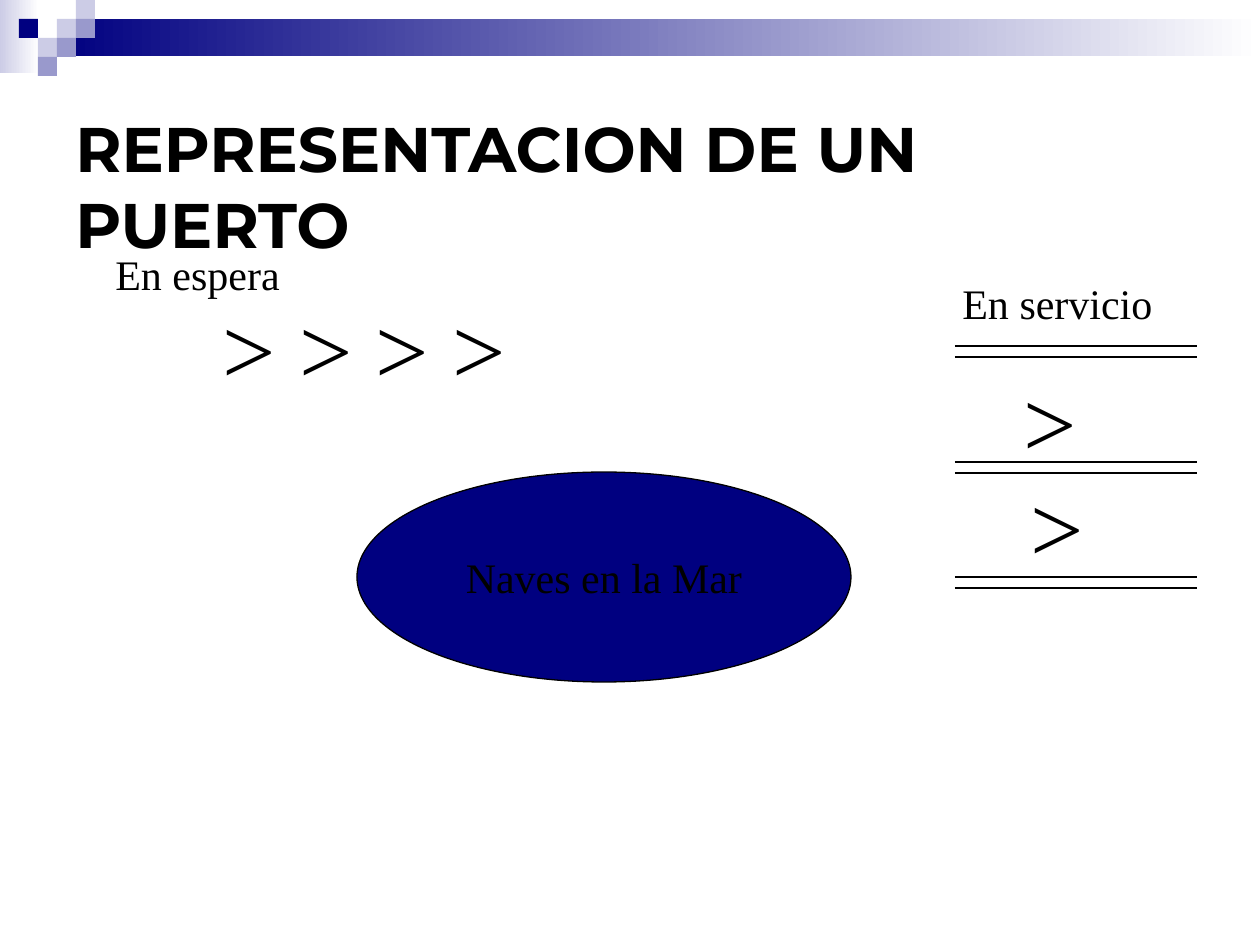
from lxml.etree import SubElement
from pptx import Presentation
from pptx.dml.color import RGBColor
from pptx.enum.shapes import MSO_CONNECTOR, MSO_SHAPE
from pptx.enum.text import MSO_ANCHOR, PP_ALIGN
from pptx.oxml.ns import qn
from pptx.util import Pt

EMU_PER_PX = 914400 / 126
NAVY = RGBColor(0x00, 0x00, 0x80)
LAVENDER = RGBColor(0xCC, 0xCC, 0xE6)
PERIWINKLE = RGBColor(0x99, 0x99, 0xCC)
WHITE = RGBColor(0xFF, 0xFF, 0xFF)
BLACK = RGBColor(0x00, 0x00, 0x00)
SERIF = "Times New Roman"
TITLE_FONT = "Montserrat"
CELL = 19


def px(n):
    return round(n * EMU_PER_PX)


def add_shape(s, kind, x, y, w, h):
    sp = s.shapes.add_shape(kind, px(x), px(y), px(w), px(h))
    sp.shadow.inherit = False
    sp.line.fill.background()
    return sp


def add_square(s, col, row, color):
    sp = add_shape(s, MSO_SHAPE.RECTANGLE, col * CELL, row * CELL, CELL, CELL)
    sp.fill.solid()
    sp.fill.fore_color.rgb = color


def add_fade(s, x, y, w, h, color):
    sp = add_shape(s, MSO_SHAPE.RECTANGLE, x, y, w, h)
    sp.fill.gradient()
    sp.fill.gradient_angle = 0
    for stop, rgb, position in zip(sp.fill.gradient_stops, (color, WHITE), (0, 1)):
        stop.color.rgb = rgb
        stop.position = position


def add_run(p, text, size, font=SERIF, bold=False):
    r = p.add_run()
    r.text = text
    r.font.size = Pt(size)
    r.font.name = font
    r.font.bold = bold
    r.font.color.rgb = BLACK


def add_text(s, x, y, w, h, text, size, wrap=False):
    tf = s.shapes.add_textbox(px(x), px(y), px(w), px(h)).text_frame
    tf.word_wrap = wrap
    add_run(tf.paragraphs[0], text, size)


def add_title(s, text):
    tf = s.shapes.add_textbox(px(63), px(106), px(1134), px(158)).text_frame
    tf.word_wrap = True
    tf.vertical_anchor = MSO_ANCHOR.MIDDLE
    add_run(tf.paragraphs[0], text, 36, TITLE_FONT, True)


def add_sea(s, text):
    sp = add_shape(s, MSO_SHAPE.OVAL, 357, 472, 494, 210)
    sp.fill.solid()
    sp.fill.fore_color.rgb = NAVY
    sp.line.color.rgb = BLACK
    sp.line.width = Pt(0.75)
    tf = sp.text_frame
    tf.word_wrap = False
    tf.vertical_anchor = MSO_ANCHOR.MIDDLE
    p = tf.paragraphs[0]
    p.alignment = PP_ALIGN.CENTER
    add_run(p, text, 24)


def add_pier(s, y):
    for line_y in (y, y + 11):
        line = s.shapes.add_connector(
            MSO_CONNECTOR.STRAIGHT, px(955), px(line_y), px(1197), px(line_y))
        line.line.color.rgb = BLACK
        line.line.width = Pt(0.75)
        SubElement(line._element.spPr, qn("a:effectLst"))


def add_banner(s):
    add_fade(s, 0, 0, 39, 73, LAVENDER)
    add_fade(s, 57, 19, 1203, 37, NAVY)
    for col, row, color in (
        (3, 1, LAVENDER), (4, 0, LAVENDER), (4, 1, PERIWINKLE), (2, 2, LAVENDER),
        (1, 1, NAVY), (3, 2, PERIWINKLE), (2, 3, PERIWINKLE),
    ):
        add_square(s, col, row, color)


def main():
    prs = Presentation()
    prs.slide_width = px(1260)
    prs.slide_height = px(945)
    s = prs.slides.add_slide(prs.slide_layouts[6])
    add_banner(s)
    add_title(s, "REPRESENTACION DE UN PUERTO")
    add_sea(s, "Naves en la Mar")
    for y in (346, 462, 577):
        add_pier(s, y)
    add_text(s, 210, 284, 451, 126, "> > > >", 54, True)
    add_text(s, 1011, 357, 228, 126, ">", 54, True)
    add_text(s, 1018, 462, 78, 126, ">", 54)
    add_text(s, 103, 242, 190, 63, "En espera", 24)
    add_text(s, 950, 271, 215, 63, "En servicio", 24)
    prs.save("out.pptx")


if __name__ == "__main__":
    main()
